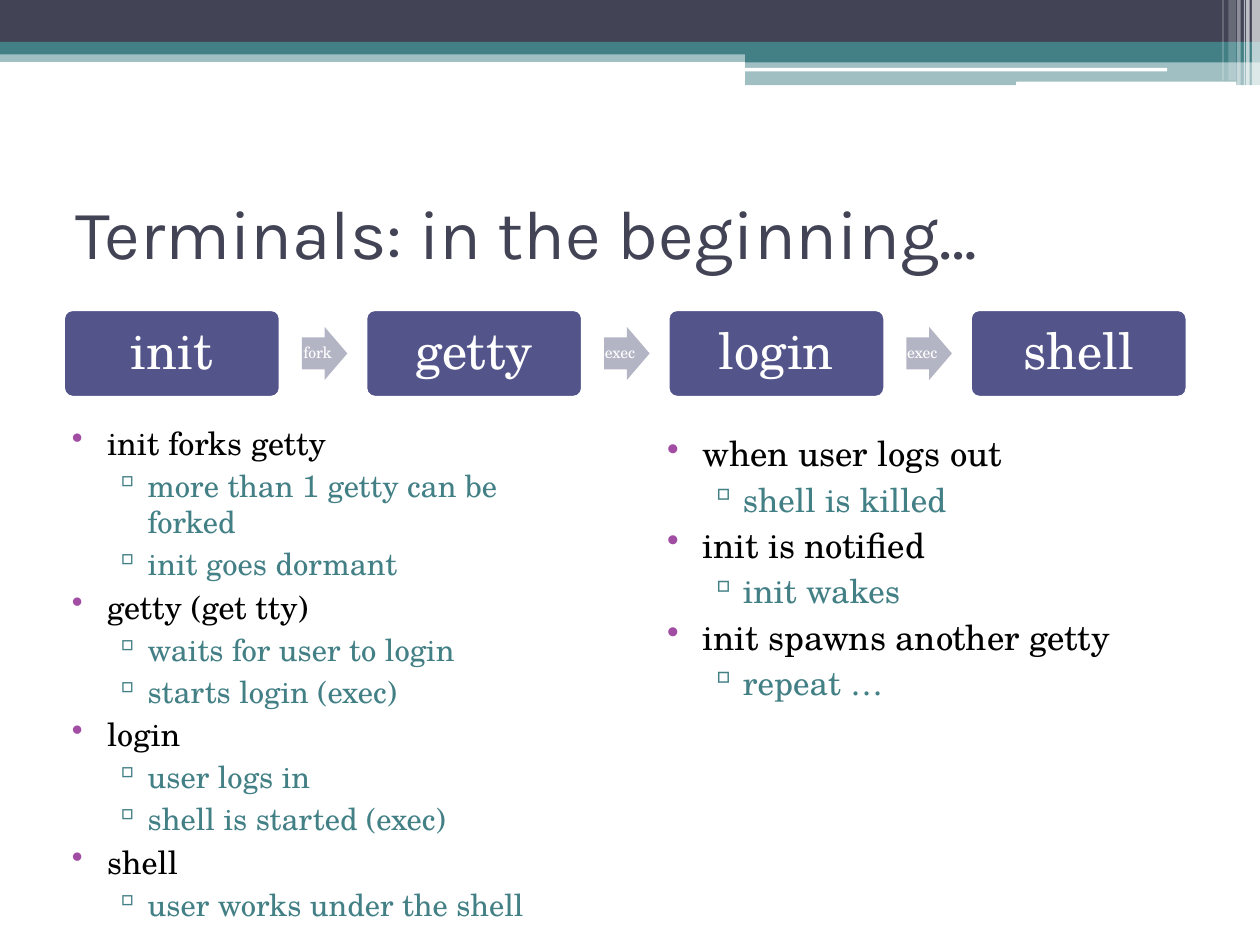
from lxml.etree import SubElement
from pptx import Presentation
from pptx.dml.color import RGBColor
from pptx.enum.shapes import MSO_SHAPE as Shape
from pptx.enum.text import MSO_ANCHOR as Anchor, MSO_AUTO_SIZE as AutoSize, PP_ALIGN as Align
from pptx.oxml.ns import qn
from pptx.util import Cm, Pt

COLORS = {
    "slate": "424456", "teal": "438086", "white": "FFFFFF", "indigo": "53548A",
    "arrow": "B3B4C4", "purple": "A04DA3", "black": "000000",
}
HEADING_FONT, BODY_FONT = "Karla", "TeX Gyre Schola"

TITLE = "Terminals: in the beginning…"
STAGES = ["init", "getty", "login", "shell"]
CALLS = ["fork", "exec", "exec"]
STARTUP = [
    ("init forks getty", ["more than 1 getty can be forked", "init goes dormant"]),
    ("getty (get tty)", ["waits for user to login", "starts login (exec)"]),
    ("login", ["user logs in", "shell is started (exec)"]),
    ("shell", ["user works under the shell"]),
]
LOGOUT = [
    ("when user logs out", ["shell is killed"]),
    ("init is notified", ["init wakes"]),
    ("init spawns another getty", ["repeat …"]),
]
COLUMNS = [
    (STARTUP, (1, 9.32), (20.4, 19.4)),
    (LOGOUT, (14.33, 9.53), (22, 21)),
]
COLUMN_SIZE = (12.27, 11)
LEVELS = [
    ("•", "purple", "black", 1.12, -0.79),
    ("▫", "teal", "teal", 2.03, -0.76),
]

BANDS = [
    (Shape.RECTANGLE, (0, 1.14, 28.22, 0.25), "teal", 50),
    (Shape.RECTANGLE, (0, 0, 28.22, 0.96), "slate", 100),
    (Shape.RECTANGLE, (0, 0.94, 28.22, 0.28), "teal", 100),
    (Shape.RECTANGLE, (16.69, 1.12, 11.53, 0.28), "teal", 100),
    (Shape.RECTANGLE, (16.69, 1.35, 11.53, 0.56), "teal", 50),
    (Shape.ROUNDED_RECTANGLE, (16.69, 1.52, 9.45, 0.08), "white", 100),
    (Shape.ROUNDED_RECTANGLE, (22.76, 1.83, 4.93, 0.1), "white", 100),
]
STRIPES = [
    (28.04, 0.18, 1.93, 65), (27.91, 0.08, 1.93, 65), (27.86, 0.03, 1.93, 60),
    (27.71, 0.08, 1.93, 40), (27.51, 0.18, 1.8, 20), (27.38, 0.03, 1.8, 30),
]

STAGE_LEFT, STAGE_TOP, STAGE_PITCH = 1.43, 6.94, 6.77
STAGE_WIDTH, STAGE_HEIGHT = 4.84, 1.95
ARROW_GAP, ARROW_WIDTH, ARROW_HEIGHT = 0.49, 1.02, 1.19


def rgb(color):
    return RGBColor.from_string(COLORS[color])


def add_filled(slide, kind, box, color, opacity=100):
    shape = slide.shapes.add_shape(kind, *map(Cm, box))
    shape.shadow.inherit = False
    shape.fill.solid()
    shape.fill.fore_color.rgb = rgb(color)
    shape.line.fill.background()
    if opacity < 100:
        fill_color = shape.fill._xPr.find(qn("a:solidFill"))[0]
        SubElement(fill_color, qn("a:alpha"), val=str(opacity * 1000))
    return shape


def set_margins(frame, horizontal, vertical):
    frame.margin_left = frame.margin_right = Cm(horizontal)
    frame.margin_top = frame.margin_bottom = Cm(vertical)


def add_run(paragraph, words, size, color, font=BODY_FONT):
    run = paragraph.add_run()
    run.text = words
    run.font.name = font
    run.font.size = Pt(size)
    run.font.color.rgb = rgb(color)


def label(shape, words, size):
    frame = shape.text_frame
    frame.word_wrap = False
    frame.vertical_anchor = Anchor.MIDDLE
    set_margins(frame, 0, 0)
    paragraph = frame.paragraphs[0]
    paragraph.alignment = Align.CENTER
    paragraph.line_spacing = 0.9
    add_run(paragraph, words, size, "white")


def add_bullet(paragraph, level):
    mark, mark_color, _, margin, indent = LEVELS[level]
    paragraph.level = level
    paragraph.space_before = Pt(3.3)
    properties = paragraph._p.get_or_add_pPr()
    properties.set("marL", str(Cm(margin)))
    properties.set("indent", str(Cm(indent)))
    bullet_color = SubElement(properties, qn("a:buClr"))
    SubElement(bullet_color, qn("a:srgbClr"), val=COLORS[mark_color])
    SubElement(properties, qn("a:buChar"), char=mark)


def add_column(slide, topics, position, sizes):
    frame = slide.shapes.add_textbox(*map(Cm, position + COLUMN_SIZE)).text_frame
    frame.word_wrap = True
    set_margins(frame, 0.28, 0.15)
    lines = [
        (words, level)
        for topic, details in topics
        for words, level in [(topic, 0)] + [(detail, 1) for detail in details]
    ]
    for index, (words, level) in enumerate(lines):
        paragraph = frame.add_paragraph() if index else frame.paragraphs[0]
        add_bullet(paragraph, level)
        add_run(paragraph, words, sizes[level], LEVELS[level][2])


def add_title(slide):
    title = slide.shapes.title
    title.left, title.top, title.width, title.height = map(Cm, (1.41, 3.53, 25.4, 3.3))
    frame = title.text_frame
    frame.auto_size = AutoSize.NONE
    frame.word_wrap = True
    frame.vertical_anchor = Anchor.MIDDLE
    set_margins(frame, 0.28, 0.15)
    frame.paragraphs[0].alignment = Align.LEFT
    add_run(frame.paragraphs[0], TITLE, 44, "slate", HEADING_FONT)


def add_flow(slide):
    for index, stage in enumerate(STAGES):
        left = STAGE_LEFT + index * STAGE_PITCH
        box = add_filled(slide, Shape.ROUNDED_RECTANGLE,
                         (left, STAGE_TOP, STAGE_WIDTH, STAGE_HEIGHT), "indigo")
        box.adjustments[0] = 0.1
        box.line.color.rgb = rgb("white")
        box.line.width = Pt(1.5)
        label(box, stage, 32)
    arrow_top = STAGE_TOP + (STAGE_HEIGHT - ARROW_HEIGHT) / 2
    for index, call in enumerate(CALLS):
        left = STAGE_LEFT + index * STAGE_PITCH + STAGE_WIDTH + ARROW_GAP
        arrow = add_filled(slide, Shape.RIGHT_ARROW,
                           (left, arrow_top, ARROW_WIDTH, ARROW_HEIGHT), "arrow")
        arrow.adjustments[0] = 0.6
        arrow.adjustments[1] = 0.5
        label(arrow, call, 10)


def main():
    deck = Presentation()
    deck.slide_width, deck.slide_height = Cm(28.22), Cm(21.16)
    slide = deck.slides.add_slide(deck.slide_layouts[5])
    for band in BANDS:
        add_filled(slide, *band)
    for left, width, height, opacity in STRIPES:
        add_filled(slide, Shape.RECTANGLE, (left, 0, width, height), "white", opacity)
    add_title(slide)
    add_flow(slide)
    for column in COLUMNS:
        add_column(slide, *column)
    deck.save("out.pptx")


if __name__ == "__main__":
    main()
